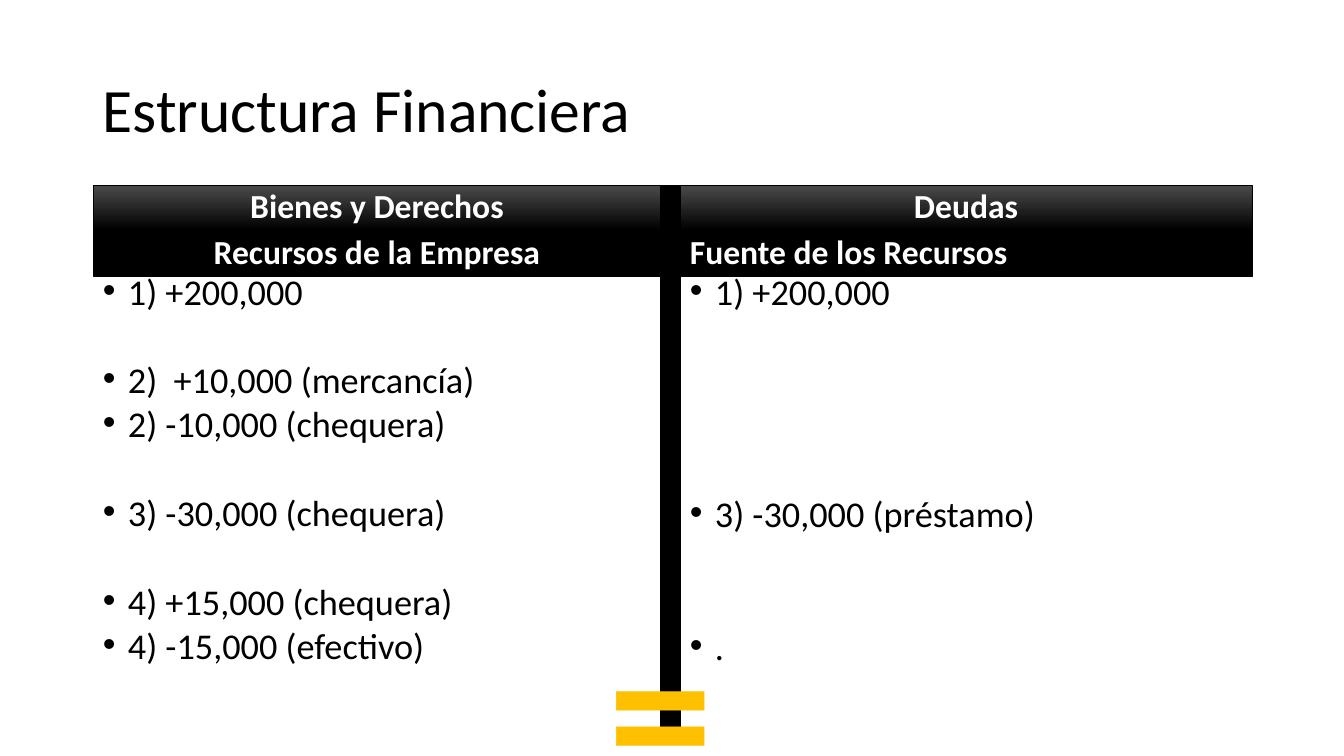
from lxml import etree
from pptx import Presentation
from pptx.dml.color import RGBColor
from pptx.enum.shapes import MSO_SHAPE
from pptx.enum.text import MSO_ANCHOR, MSO_AUTO_SIZE, PP_ALIGN
from pptx.oxml.ns import qn
from pptx.util import Pt

RECT = MSO_SHAPE.RECTANGLE
TOP, MIDDLE, BOTTOM = MSO_ANCHOR.TOP, MSO_ANCHOR.MIDDLE, MSO_ANCHOR.BOTTOM
LEFT, CENTER = PP_ALIGN.LEFT, PP_ALIGN.CENTER
FIT = MSO_AUTO_SIZE.SHAPE_TO_FIT_TEXT

# Content: each entry is (row, text)
TITLE = "Estructura Financiera"
SIDES = [
    {"x": 93, "w": 568,
     "head": [("Bienes y Derechos", CENTER), ("Recursos de la Empresa", CENTER)],
     "rows": [(0, "1) +200,000"), (2, "2)  +10,000 (mercancía)"),
              (3, "2) -10,000 (chequera)"), (5, "3) -30,000 (chequera)"),
              (7, "4) +15,000 (chequera)"), (8, "4) -15,000 (efectivo)")]},
    {"x": 680, "w": 572,
     "head": [("Deudas", CENTER), ("Fuente de los Recursos", LEFT)],
     "rows": [(0, "1) +200,000"), (5, "3) -30,000 (préstamo)"), (8, ".")]},
]
COLORS = {"ink": "000000", "sheen": "4B4B4B", "paper": "FFFFFF", "gold": "FFC000"}

# Layout in px, type in points
PX = 914400 / 100.8
HEAD_Y, HEAD_H, BODY_H = 185, 91, 406
INDENT = 25
GAP, PITCH = 9.7, 31.8
FONTS = {
    "title": {"name": "Calibri", "size": Pt(44)},
    "head": {"name": "Calibri", "size": Pt(24), "bold": True},
    "body": {"name": "Calibri", "size": Pt(25.9)},
    "sign": {"name": "Calibri", "size": Pt(150), "bold": True},
}


def px(n):
    return round(n * PX)


def rgb(key):
    return RGBColor.from_string(COLORS[key])


def box(x, y, w, h, anchor=TOP, wrap=True):
    shape = slide.shapes.add_textbox(px(x), px(y), px(w), px(h))
    shape.text_frame.word_wrap = wrap
    shape.text_frame.vertical_anchor = anchor
    return shape


def rect(x, y, w, h, width):
    shape = slide.shapes.add_shape(RECT, px(x), px(y), px(w), px(h))
    shape.shadow.inherit = False
    shape.line.color.rgb = rgb("ink")
    shape.line.width = Pt(width)
    return shape


def write(frame, i, text, kind, color, **form):
    para = frame.add_paragraph() if i else frame.paragraphs[0]
    for key, value in form.items():
        setattr(para, key, value)
    run = para.add_run()
    run.text = text
    for key, value in FONTS[kind].items():
        setattr(run.font, key, value)
    run.font.color.rgb = rgb(color)
    return para


def bullet(para):
    props = para._p.get_or_add_pPr()
    props.set("marL", str(px(INDENT)))
    props.set("indent", str(-px(INDENT)))
    etree.SubElement(props, qn("a:buFont")).set("typeface", "Arial")
    etree.SubElement(props, qn("a:buChar")).set("char", "•")


def header(side):
    shape = rect(side["x"], HEAD_Y, side["w"], HEAD_H, 0.5)
    shape.fill.gradient()
    shape.fill.gradient_angle = 270
    for stop, key, place in zip(shape.fill.gradient_stops, ("sheen", "ink"), (0, 0.5)):
        stop.color.rgb = rgb(key)
        stop.position = place
    frame = shape.text_frame
    frame.word_wrap = True
    frame.vertical_anchor = BOTTOM
    for i, (text, align) in enumerate(side["head"]):
        write(frame, i, text, "head", "paper", alignment=align,
              line_spacing=0.8, space_before=Pt(10))


def entries(side):
    frame = box(side["x"], HEAD_Y + HEAD_H, side["w"], BODY_H).text_frame
    last = -1
    for i, (row, text) in enumerate(side["rows"]):
        space = GAP + PITCH * (row - last - 1)
        bullet(write(frame, i, text, "body", "ink",
                     line_spacing=0.7, space_before=Pt(space)))
        last = row


deck = Presentation()
deck.slide_width, deck.slide_height = px(1344), px(756)
slide = deck.slides.add_slide(deck.slide_layouts[6])

# Title
write(box(93, 40, 1159, 146, MIDDLE).text_frame, 0, TITLE, "title", "ink",
      line_spacing=0.9)

# Two sides of the account
for side in SIDES:
    header(side)
    entries(side)

# Divider and equals sign
bar = rect(661, 186, 19, 544, 1)
bar.fill.solid()
bar.fill.fore_color.rgb = rgb("ink")
sign = box(598, 571, 126, 265, wrap=False).text_frame
sign.auto_size = FIT
write(sign, 0, "=", "sign", "gold", alignment=CENTER)

deck.save("out.pptx")
